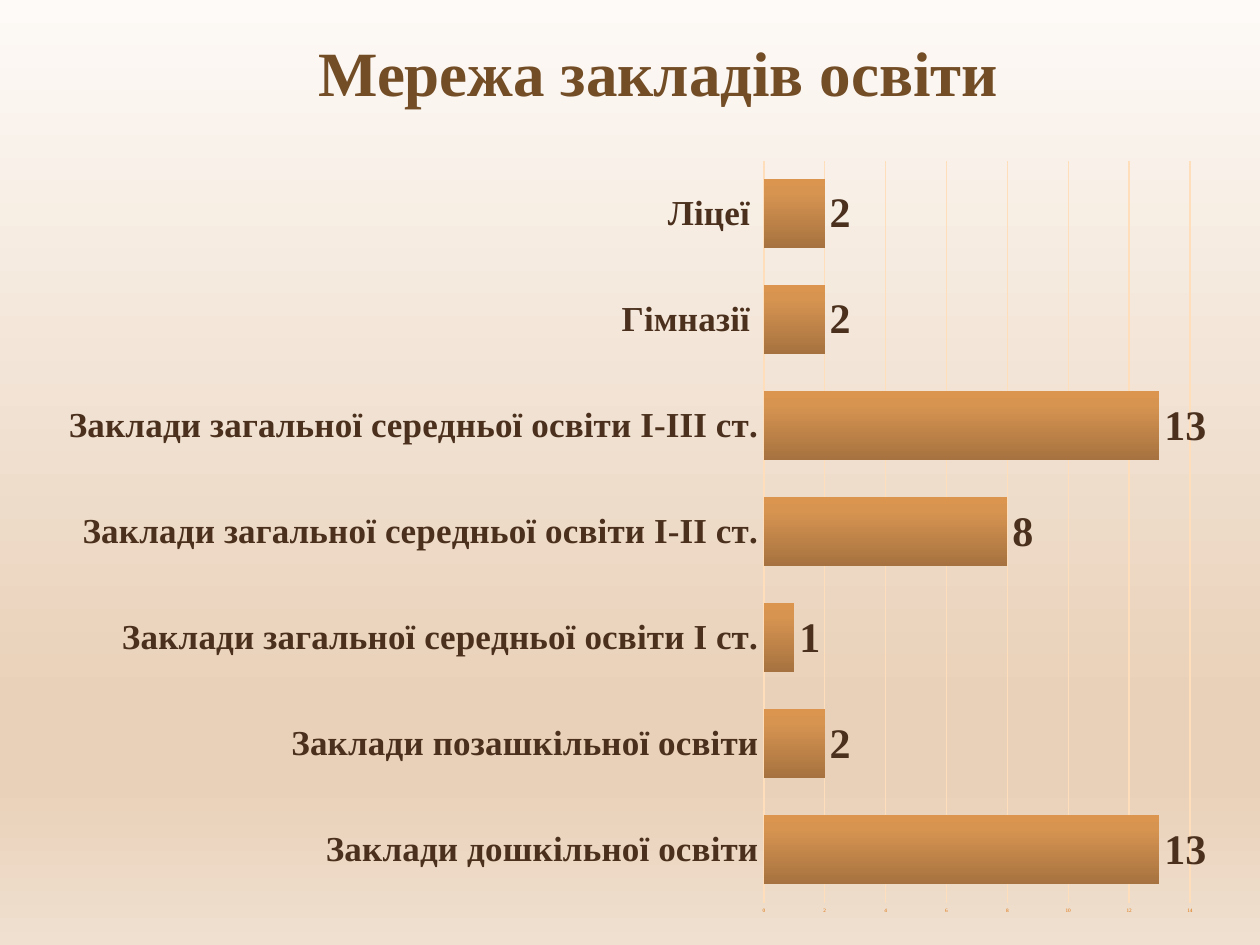
from lxml import etree
from pptx import Presentation
from pptx.chart.data import CategoryChartData
from pptx.dml.color import RGBColor
from pptx.enum.chart import XL_CHART_TYPE, XL_LABEL_POSITION, XL_TICK_MARK
from pptx.enum.text import MSO_ANCHOR, PP_ALIGN
from pptx.oxml.ns import qn
from pptx.util import Inches, Pt

BAR = XL_CHART_TYPE.BAR_CLUSTERED
OUTSIDE_END = XL_LABEL_POSITION.OUTSIDE_END
NO_TICK = XL_TICK_MARK.NONE
CENTER = PP_ALIGN.CENTER
MIDDLE = MSO_ANCHOR.MIDDLE

# Content
TITLE = "Мережа закладів освіти"
INSTITUTIONS = [
    ("Заклади дошкільної освіти", 13),
    ("Заклади позашкільної освіти", 2),
    ("Заклади загальної середньої освіти І ст.", 1),
    ("Заклади загальної середньої освіти І-ІІ ст.", 8),
    ("Заклади загальної середньої освіти І-ІІІ ст.", 13),
    ("Гімназії ", 2),
    ("Ліцеї ", 2),
]

# Style
FONT = "Times New Roman"
TITLE_COLOR = "734D26"
LABEL_COLOR = "4A301D"
GRID_COLOR = "FFDEBC"
BACKGROUND_STOPS = [(0, "FDFAF7"), (74, "E9D1B9"), (83, "E9D1B9"), (100, "F0E0D0")]
BAR_STOPS = [(0, "A6723F"), (80, "D79451"), (100, "DB954F")]
PLOT_LAYOUT = {"x": 0.615, "y": 0.02, "w": 0.364, "h": 0.947}


def rgb(value):
    return RGBColor.from_string(value)


def style_font(font, size, color, bold=False):
    font.name = FONT
    font.size = Pt(size)
    font.bold = bold
    font.color.rgb = rgb(color)


def style_line(line, color, width):
    line.color.rgb = rgb(color)
    line.width = Pt(width)


def set_gradient(fill, owner, stops, angle):
    """Fill with a linear gradient; the angle runs counter-clockwise."""
    fill.gradient()
    fill.gradient_angle = angle
    stop_list = owner.find(".//" + qn("a:gsLst"))
    for old_stop in list(stop_list):
        stop_list.remove(old_stop)
    for position, color in stops:
        stop = etree.SubElement(stop_list, qn("a:gs"), pos=str(position * 1000))
        etree.SubElement(stop, qn("a:srgbClr"), val=color)


def set_plot_layout(chart, layout):
    plot_area = chart._chartSpace.find(".//" + qn("c:plotArea"))
    element = plot_area.find(qn("c:layout"))
    if element is None:
        element = etree.Element(qn("c:layout"))
        plot_area.insert(0, element)
    manual = etree.SubElement(element, qn("c:manualLayout"))
    settings = {"layoutTarget": "inner", "xMode": "edge", "yMode": "edge", **layout}
    for name, value in settings.items():
        etree.SubElement(manual, qn("c:" + name), val=str(value))


presentation = Presentation()
presentation.slide_width = Inches(10)
presentation.slide_height = Inches(7.5)
slide = presentation.slides.add_slide(presentation.slide_layouts[6])
set_gradient(slide.background.fill, slide.element, BACKGROUND_STOPS, 270)

# Title
title = slide.shapes.add_textbox(Inches(2.4), Inches(0.21), Inches(5.65), Inches(0.71))
title.text_frame.word_wrap = False
title.text_frame.vertical_anchor = MIDDLE
paragraph = title.text_frame.paragraphs[0]
paragraph.alignment = CENTER
run = paragraph.add_run()
run.text = TITLE
style_font(run.font, 36, TITLE_COLOR, bold=True)

# Bar chart
data = CategoryChartData()
data.categories = [name for name, count in INSTITUTIONS]
data.add_series("Series 1", [count for name, count in INSTITUTIONS])
chart = slide.shapes.add_chart(
    BAR, Inches(0.35), Inches(1.15), Inches(9.29), Inches(6.22), data
).chart
chart.has_title = False
chart.has_legend = False
style_font(chart.font, 10, "402000")
set_plot_layout(chart, PLOT_LAYOUT)

# Bars and their values
plot = chart.plots[0]
plot.vary_by_categories = False
plot.gap_width = 53
plot.overlap = -20
series = plot.series[0]
set_gradient(series.format.fill, series._element, BAR_STOPS, 90)
labels = series.data_labels
labels.show_value = True
labels.position = OUTSIDE_END
style_font(labels.font, 24, LABEL_COLOR, bold=True)

# Axes
category_axis, value_axis = chart.category_axis, chart.value_axis
for axis in (category_axis, value_axis):
    axis.major_tick_mark = NO_TICK
    axis.minor_tick_mark = NO_TICK
style_font(category_axis.tick_labels.font, 20, LABEL_COLOR, bold=True)
style_line(category_axis.format.line, GRID_COLOR, 1)
style_font(value_axis.tick_labels.font, 3, "DC6E00")
value_axis.minimum_scale = 0
value_axis.maximum_scale = 14
value_axis.major_unit = 2
value_axis.format.line.fill.background()
value_axis.has_major_gridlines = True
style_line(value_axis.major_gridlines.format.line, GRID_COLOR, 0.75)

presentation.save("out.pptx")
